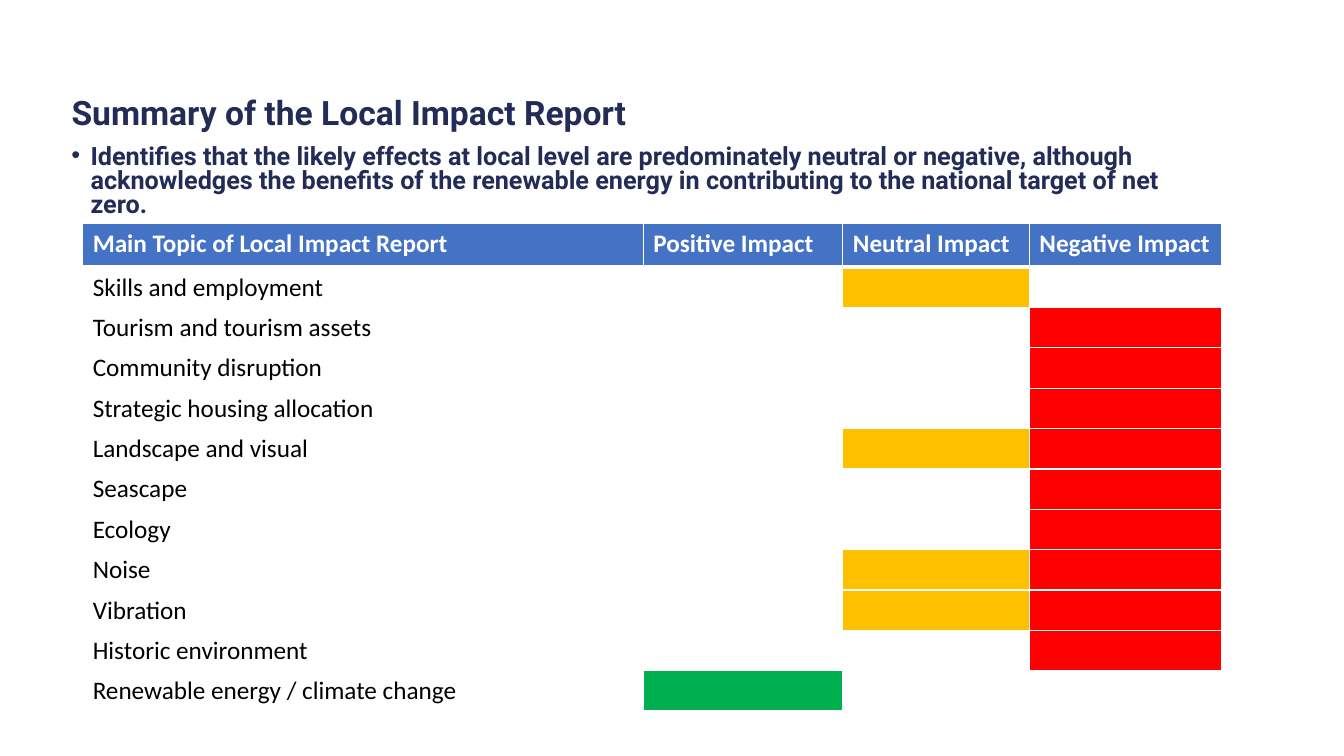
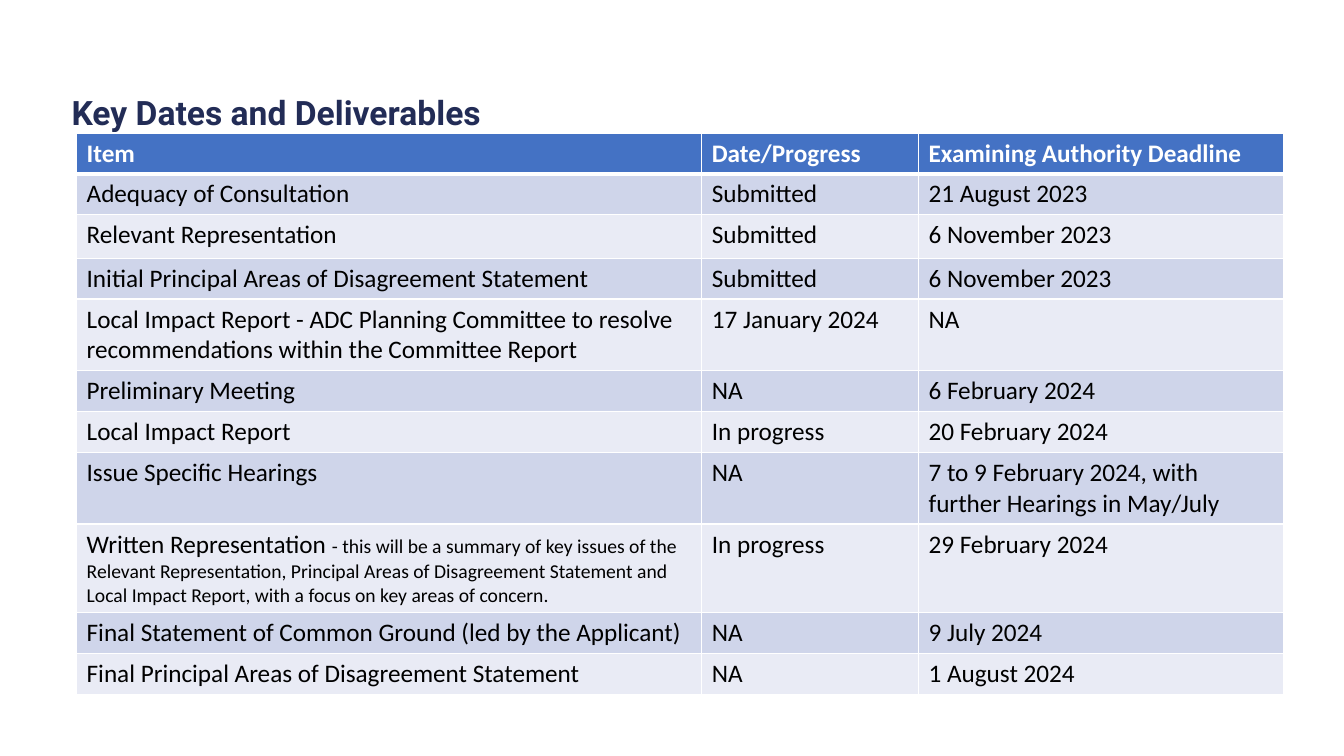
from lxml.etree import SubElement
from pptx import Presentation
from pptx.dml.color import RGBColor
from pptx.enum.text import MSO_ANCHOR, MSO_AUTO_SIZE, PP_ALIGN
from pptx.oxml.ns import qn
from pptx.util import Inches, Pt

NAVY, BLUE, WHITE, BLACK = "222C56", "4472C4", "FFFFFF", "000000"
GREEN, AMBER, RED = "00B050", "FFC000", "FF0000"
BANDS = ("CFD5EA", "E9EBF5")

IMPACT_HEADINGS = ("Main Topic of Local Impact Report", "Positive Impact",
                   "Neutral Impact", "Negative Impact")
IMPACT_COLOURS = {"positive": GREEN, "neutral": AMBER, "negative": RED}
TOPIC_IMPACTS = {
    "Skills and employment": ("neutral",),
    "Tourism and tourism assets": ("negative",),
    "Community disruption": ("negative",),
    "Strategic housing allocation": ("negative",),
    "Landscape and visual": ("neutral", "negative"),
    "Seascape": ("negative",),
    "Ecology": ("negative",),
    "Noise": ("neutral", "negative"),
    "Vibration": ("neutral", "negative"),
    "Historic environment": ("negative",),
    "Renewable energy / climate change": ("positive",),
}

DATE_HEADINGS = ("Item", "Date/Progress", "Examining Authority Deadline")
WRITTEN_NOTE = ("- this will be a summary of key issues of the Relevant Representation, "
                "Principal Areas of Disagreement Statement and Local Impact Report, "
                "with a focus on key areas of concern.")
# Row height, then item, progress and deadline
DELIVERABLES = [
    (0.4, "Adequacy of Consultation", "Submitted", "21 August 2023"),
    (0.43, "Relevant Representation", "Submitted", "6 November 2023"),
    (0.4, "Initial Principal Areas of Disagreement Statement", "Submitted",
     "6 November 2023"),
    (0.7, "Local Impact Report - ADC Planning Committee to resolve "
          "recommendations within the Committee Report", "17 January 2024", "NA"),
    (0.4, "Preliminary Meeting", "NA", "6 February 2024"),
    (0.4, "Local Impact Report", "In progress", "20 February 2024"),
    (0.7, "Issue Specific Hearings", "NA",
     "7 to 9 February 2024, with further Hearings in May/July"),
    (0.87, ("Written Representation ", WRITTEN_NOTE), "In progress", "29 February 2024"),
    (0.4, "Final Statement of Common Ground (led by the Applicant)", "NA", "9 July 2024"),
    (0.4, "Final Principal Areas of Disagreement Statement", "NA", "1 August 2024"),
]


def rgb(colour):
    return RGBColor.from_string(colour)


class Deck:
    HEADING = {"name": "Roboto", "size": Pt(24), "bold": True}
    BULLET = {"name": "Roboto", "size": Pt(18), "bold": True}
    HEADER = {"name": "Calibri", "size": Pt(18), "bold": True}
    CELL = {"name": "Calibri", "size": Pt(18), "bold": False}
    NOTE = {"name": "Calibri", "size": Pt(14), "bold": False}

    def __init__(self):
        self.presentation = Presentation()
        self.presentation.slide_width = Inches(13.33)
        self.presentation.slide_height = Inches(7.5)
        self.slide = None

    def add_run(self, paragraph, text, style, colour):
        run = paragraph.add_run()
        run.text = text
        for attribute, value in style.items():
            setattr(run.font, attribute, value)
        run.font.color.rgb = rgb(colour)

    def add_slide(self, heading):
        self.slide = self.presentation.slides.add_slide(
            self.presentation.slide_layouts[5])
        title = self.slide.shapes.title
        title.left, title.top = Inches(0.61), Inches(0.41)
        title.width, title.height = Inches(11.5), Inches(1.45)
        frame = title.text_frame
        frame.word_wrap = True
        frame.auto_size = MSO_AUTO_SIZE.NONE
        frame.vertical_anchor = MSO_ANCHOR.MIDDLE
        paragraph = frame.paragraphs[0]
        paragraph.alignment = PP_ALIGN.LEFT
        paragraph.line_spacing = 0.9
        self.add_run(paragraph, heading, self.HEADING, NAVY)

    def add_bullet(self, text, left, top, width, height):
        box = self.slide.shapes.add_textbox(
            Inches(left), Inches(top), Inches(width), Inches(height))
        box.text_frame.word_wrap = True
        paragraph = box.text_frame.paragraphs[0]
        properties = paragraph._p.get_or_add_pPr()
        properties.set("marL", str(Inches(0.19)))
        properties.set("indent", str(-Inches(0.19)))
        SubElement(properties, qn("a:buFont"), typeface="Arial")
        SubElement(properties, qn("a:buChar"), char="•")
        paragraph.line_spacing = 0.8
        self.add_run(paragraph, text, self.BULLET, NAVY)

    def set_borders(self, cell, **widths):
        """Draw white borders, 1 pt unless a side (L, R, T, B) is given a width."""
        properties = cell._tc.get_or_add_tcPr()
        for side in "LRTB":
            line = SubElement(properties, qn(f"a:ln{side}"),
                              w=str(Pt(widths.get(side, 1))))
            fill = SubElement(line, qn("a:solidFill"))
            SubElement(fill, qn("a:srgbClr"), val=WHITE)

    def fill_cell(self, cell, colour):
        if colour:
            cell.fill.solid()
            cell.fill.fore_color.rgb = rgb(colour)
        else:
            cell.fill.background()

    def add_table(self, left, top, widths, heights, headings, rows):
        """Add a table; each body cell is (text or (text, small note), fill or None)."""
        table = self.slide.shapes.add_table(
            len(heights), len(widths), Inches(left), Inches(top),
            Inches(sum(widths)), Inches(sum(heights))).table
        table.horz_banding = False
        for column, width in zip(table.columns, widths):
            column.width = Inches(width)
        for row, height in zip(table.rows, heights):
            row.height = Inches(height)
        for column, heading in enumerate(headings):
            cell = table.cell(0, column)
            self.set_borders(cell, B=3)
            self.fill_cell(cell, BLUE)
            self.add_run(cell.text_frame.paragraphs[0], heading, self.HEADER, WHITE)
        for number, row in enumerate(rows, 1):
            for column, (content, colour) in enumerate(row):
                cell = table.cell(number, column)
                self.set_borders(cell, T=3 if number == 1 else 1)
                self.fill_cell(cell, colour)
                parts = (content,) if isinstance(content, str) else content
                for text, style in zip(parts, (self.CELL, self.NOTE)):
                    if text:
                        self.add_run(cell.text_frame.paragraphs[0], text, style, BLACK)


def add_impact_summary(deck):
    deck.add_slide("Summary of the Local Impact Report")
    deck.add_bullet(
        "Identifies that the likely effects at local level are predominately neutral or "
        "negative, although acknowledges the benefits of the renewable energy in "
        "contributing to the national target of net zero.", 0.61, 1.4, 11.5, 0.8)
    rows = [[(topic, None)] + [("", colour if impact in impacts else None)
                               for impact, colour in IMPACT_COLOURS.items()]
            for topic, impacts in TOPIC_IMPACTS.items()]
    deck.add_table(0.82, 2.22, (5.56, 1.98, 1.85, 1.91),
                   [0.43] + [0.4] * len(rows), IMPACT_HEADINGS, rows)


def add_key_dates(deck):
    deck.add_slide("Key Dates and Deliverables")
    rows = [[(content, BANDS[number % 2]) for content in contents]
            for number, (_, *contents) in enumerate(DELIVERABLES)]
    heights = [0.4] + [height for height, *_ in DELIVERABLES]
    deck.add_table(0.76, 1.32, (6.2, 2.15, 3.62), heights, DATE_HEADINGS, rows)


def main():
    deck = Deck()
    add_impact_summary(deck)
    add_key_dates(deck)
    deck.presentation.save("out.pptx")


if __name__ == "__main__":
    main()
